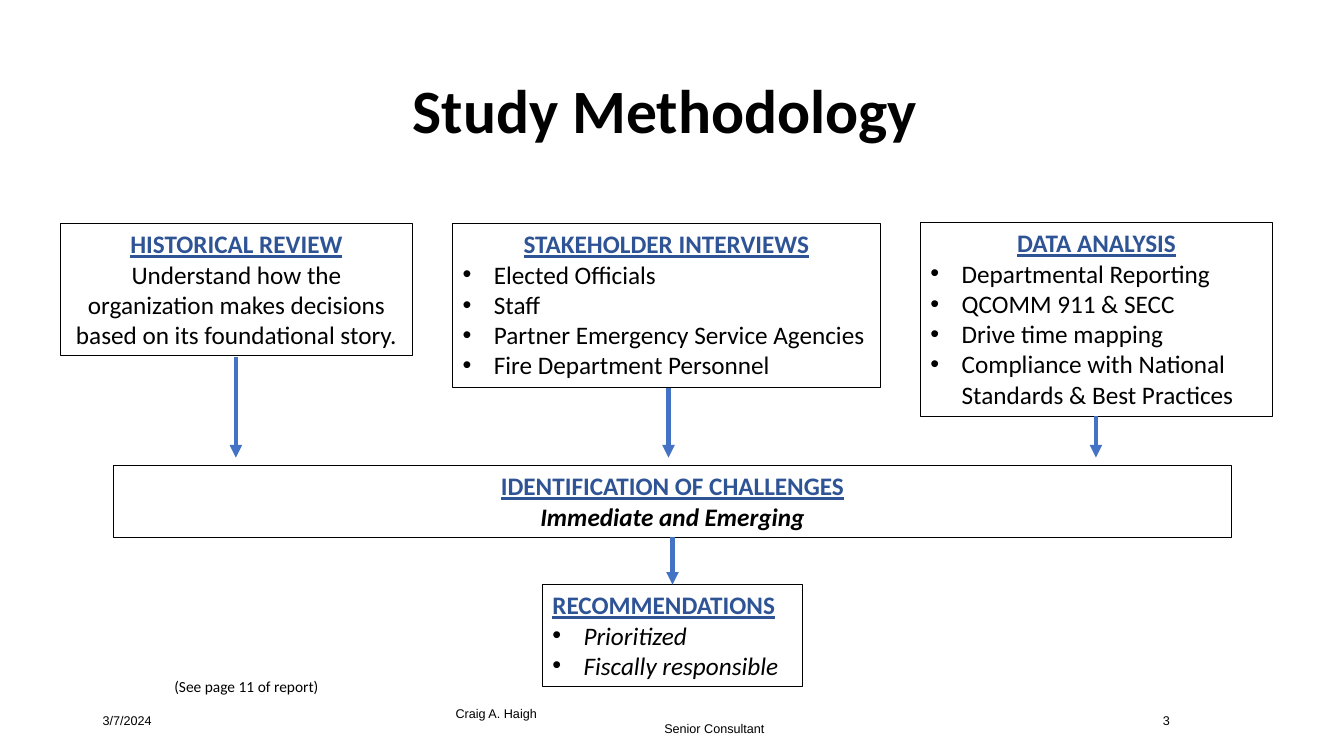
from dataclasses import dataclass

from lxml import etree
from pptx import Presentation
from pptx.dml.color import RGBColor
from pptx.enum.shapes import MSO_CONNECTOR, MSO_SHAPE
from pptx.enum.text import MSO_ANCHOR, PP_ALIGN
from pptx.oxml.ns import qn
from pptx.util import Inches, Pt

LEFT, CENTER, RIGHT = PP_ALIGN.LEFT, PP_ALIGN.CENTER, PP_ALIGN.RIGHT
TOP, MIDDLE = MSO_ANCHOR.TOP, MSO_ANCHOR.MIDDLE
RECTANGLE, STRAIGHT = MSO_SHAPE.RECTANGLE, MSO_CONNECTOR.STRAIGHT
COLORS = {"text": "000000", "heading": "2F5496", "arrow": "4472C4"}
BULLET_INDENT = 0.31


@dataclass(frozen=True)
class Line:
    text: str
    size: float = 18
    font: str = "Calibri"
    color: str = "text"
    bold: bool = False
    italic: bool = False
    underline: bool = False
    align: PP_ALIGN = CENTER
    bullet: bool = False
    indent: float = 0
    spacing: float = 1.0


@dataclass(frozen=True)
class Block:
    left: float
    top: float
    width: float
    height: float
    lines: list[Line]
    wrap: bool = True
    anchor: MSO_ANCHOR = TOP


@dataclass(frozen=True)
class Arrow:
    x: float
    top: float
    bottom: float


def heading(text: str, align: PP_ALIGN = CENTER) -> Line:
    return Line(text, color="heading", bold=True, underline=True, align=align)


def bullets(*texts: str, italic: bool = False) -> list[Line]:
    return [Line(text, italic=italic, align=LEFT, bullet=True) for text in texts]


def footer(text: str, align: PP_ALIGN = LEFT, indent: float = 0) -> Line:
    return Line(text, size=9, font="Arial", align=align, indent=indent)


def rgb(name: str) -> RGBColor:
    return RGBColor.from_string(COLORS[name])


def set_indent(para, line: Line) -> None:
    properties = para._p.get_or_add_pPr()
    if line.bullet:
        properties.set("marL", str(Inches(BULLET_INDENT)))
        properties.set("indent", str(-Inches(BULLET_INDENT)))
        etree.SubElement(properties, qn("a:buFont")).set("typeface", "Arial")
        etree.SubElement(properties, qn("a:buChar")).set("char", "•")
    elif line.indent:
        properties.set("marL", str(Inches(line.indent)))


def fill_text(shape, block: Block) -> None:
    frame = shape.text_frame
    frame.word_wrap = block.wrap
    frame.vertical_anchor = block.anchor
    for number, line in enumerate(block.lines):
        para = frame.add_paragraph() if number else frame.paragraphs[0]
        set_indent(para, line)
        para.alignment = line.align
        para.line_spacing = line.spacing
        span = para.add_run()
        span.text = line.text
        span.font.name = line.font
        span.font.size = Pt(line.size)
        span.font.bold = line.bold
        span.font.italic = line.italic
        span.font.underline = line.underline
        span.font.color.rgb = rgb(line.color)


def add_label(page, block: Block) -> None:
    box = page.shapes.add_textbox(
        Inches(block.left), Inches(block.top), Inches(block.width), Inches(block.height))
    fill_text(box, block)


def add_step(page, block: Block) -> None:
    box = page.shapes.add_shape(
        RECTANGLE, Inches(block.left), Inches(block.top), Inches(block.width), Inches(block.height))
    box.shadow.inherit = False
    box.fill.background()
    box.line.color.rgb = rgb("text")
    box.line.width = Pt(0.75)
    fill_text(box, block)


def add_arrow(page, arrow: Arrow) -> None:
    connector = page.shapes.add_connector(
        STRAIGHT, Inches(arrow.x), Inches(arrow.top), Inches(arrow.x), Inches(arrow.bottom))
    connector.line.color.rgb = rgb("arrow")
    connector.line.width = Pt(3)
    etree.SubElement(connector.line._get_or_add_ln(), qn("a:tailEnd")).set("type", "triangle")
    etree.SubElement(connector._element.spPr, qn("a:effectLst"))


LABELS = [
    Block(2.12, 0.4, 8.96, 1.45,
          [Line("Study Methodology", size=44, bold=True, spacing=0.9)], anchor=MIDDLE),
    Block(0.92, 6.95, 3, 0.4, [footer("3/7/2024")], anchor=MIDDLE),
    Block(4.42, 6.95, 4.5, 0.4,
          [footer("Craig A. Haigh"), footer("Senior Consultant", indent=2.07)], anchor=MIDDLE),
    Block(9.42, 6.95, 2.28, 0.4, [footer("3", RIGHT)], anchor=MIDDLE),
    Block(1.63, 6.67, 1.71, 0.29,
          [Line("(See page 11 of report)", size=11, align=LEFT)], wrap=False),
]

STEPS = [
    Block(0.6, 2.22, 3.49, 1.31, [
        heading("HISTORICAL REVIEW"),
        Line("Understand how the organization makes decisions "
             "based on its foundational story.")]),
    Block(4.49, 2.22, 4.24, 1.62, [
        heading("STAKEHOLDER INTERVIEWS"),
        *bullets("Elected Officials", "Staff", "Partner Emergency Service Agencies",
                 "Fire Department Personnel")]),
    Block(9.13, 2.21, 3.49, 1.92, [
        heading("DATA ANALYSIS"),
        *bullets("Departmental Reporting", "QCOMM 911 & SECC", "Drive time mapping",
                 "Compliance with National Standards & Best Practices")]),
    Block(1.13, 4.62, 11.08, 0.71, [
        heading("IDENTIFICATION OF CHALLENGES"),
        Line("Immediate and Emerging", bold=True, italic=True)]),
    Block(5.38, 5.8, 2.58, 1.01, [
        heading("RECOMMENDATIONS", LEFT),
        *bullets("Prioritized", "Fiscally responsible", italic=True)], wrap=False),
]

ARROWS = [
    Arrow(2.34, 3.54, 4.54),
    Arrow(10.87, 4.13, 4.54),
    Arrow(6.63, 3.85, 4.54),
    Arrow(6.67, 5.33, 5.8),
]


def main() -> None:
    deck = Presentation()
    deck.slide_width, deck.slide_height = Inches(13.33), Inches(7.5)
    page = deck.slides.add_slide(deck.slide_layouts[6])

    # Title, footer and page reference
    for label in LABELS:
        add_label(page, label)

    # Flow of the study
    for step in STEPS:
        add_step(page, step)
    for arrow in ARROWS:
        add_arrow(page, arrow)

    deck.save("out.pptx")


if __name__ == "__main__":
    main()
